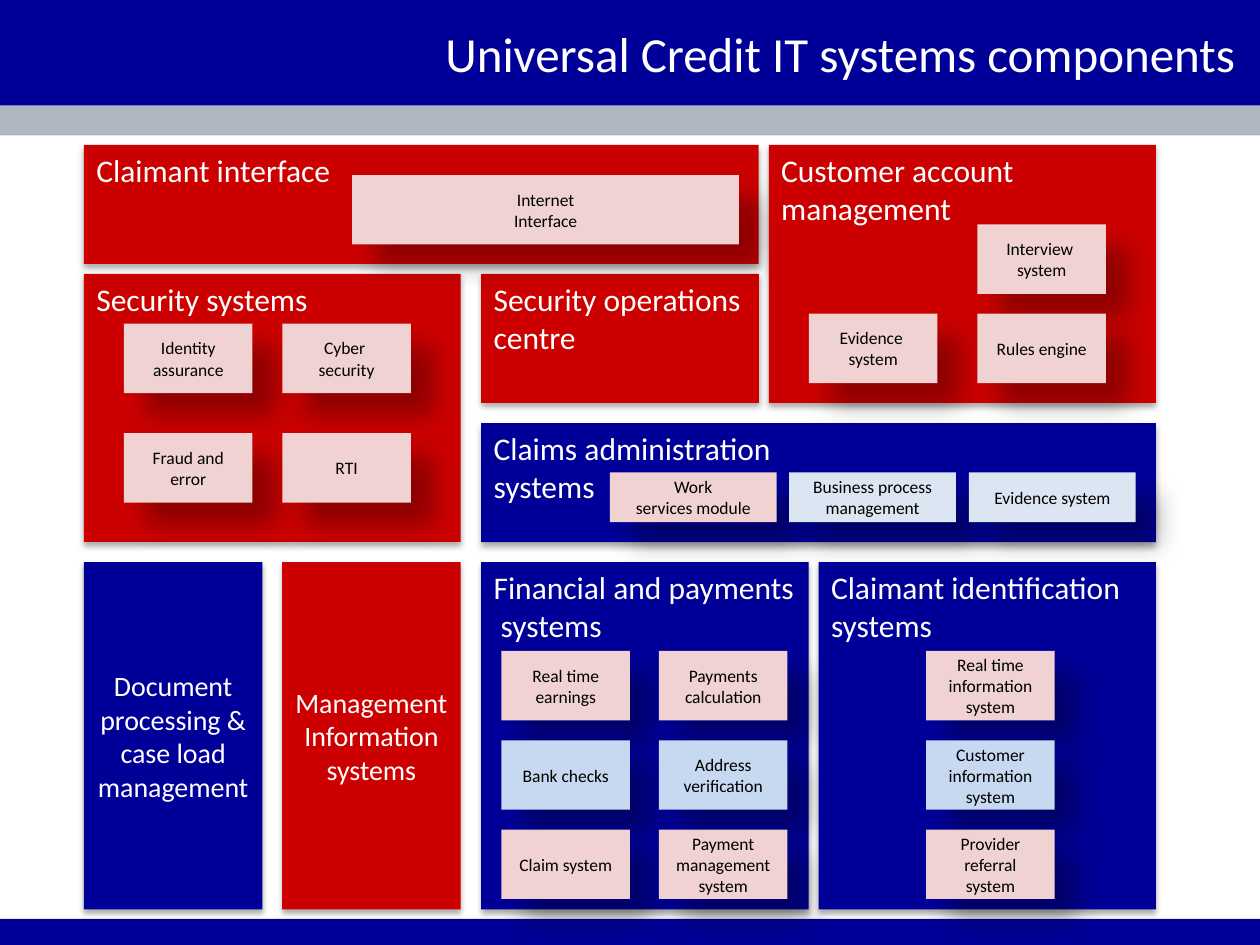
from dataclasses import dataclass, field

from lxml import etree
from pptx import Presentation
from pptx.dml.color import RGBColor
from pptx.enum import shapes, text
from pptx.oxml import ns
from pptx.util import Pt

COLORS = {
    "navy": "000099", "red": "CC0000", "grey": "AEB7C2", "white": "FFFFFF",
    "black": "000000", "pink": "EFD2D1", "pale": "DCE6F2", "sky": "C6D9F1",
}
FONT = "Calibri"
LEFT, MIDDLE, RIGHT = 48, 275, 660.5
NARROW_X, NARROW_W = 161.3, 102
SECOND_ROW, THIRD_ROW, BOTTOM_ROW = 156.5, 241.8, 321.2
TILE_W, TILE_H = 73.5, 39.7
ROW_1, ROW_2, ROW_3 = (372 + 51 * i for i in range(3))
FLAT_W, FLAT_H = 95.3, 28.4


@dataclass(frozen=True)
class Shadow:
    opacity: int
    blur: float
    distance: float
    angle: int


@dataclass(frozen=True)
class Style:
    size: float
    color: str
    align: text.PP_ALIGN
    anchor: text.MSO_ANCHOR
    shadow: Shadow


@dataclass(frozen=True)
class Tile:
    label: str
    x: float
    y: float
    fill: str = "pink"
    w: float = TILE_W
    h: float = TILE_H


@dataclass(frozen=True)
class Panel:
    label: str
    x: float
    y: float
    w: float
    h: float
    fill: str
    style: Style
    tiles: list[Tile] = field(default_factory=list)


LOW = Shadow(32, 3.5, 2.2, 90)
DEEP = Shadow(30, 15, 18, 45)
CENTER, MID = text.PP_ALIGN.CENTER, text.MSO_ANCHOR.MIDDLE
HEADED = Style(18, "white", text.PP_ALIGN.LEFT, text.MSO_ANCHOR.TOP, LOW)
CENTRED = Style(16, "white", CENTER, MID, LOW)
TILE = Style(10, "black", CENTER, MID, DEEP)

PANELS = [
    Panel("Financial and payments\v systems", MIDDLE, BOTTOM_ROW, 187.2, 198.5, "navy", HEADED, [
        Tile("Real time earnings", 286.5, ROW_1),
        Tile("Payments calculation", 376.5, ROW_1),
        Tile("Bank checks", 286.5, ROW_2, "sky"),
        Tile("Address verification", 376.5, ROW_2, "sky"),
        Tile("Claim system", 286.5, ROW_3),
        Tile("Payment management system", 376.5, ROW_3),
    ]),
    Panel("Security systems", LEFT, SECOND_ROW, 215.3, 153.2, "red", HEADED, [
        Tile("Identity assurance", 70.8, 185),
        Tile("Cyber \nsecurity", NARROW_X, 185),
        Tile("Fraud and error", 70.8, 247.5),
        Tile("RTI", NARROW_X, 247.5),
    ]),
    Panel("Management Information systems", NARROW_X, BOTTOM_ROW, NARROW_W, 198.5, "red", CENTRED),
    Panel("Claims administration\nsystems", MIDDLE, THIRD_ROW, RIGHT - MIDDLE, 68, "navy", HEADED, [
        Tile("Work\nservices module", 348.5, 270, "pink", FLAT_W, FLAT_H),
        Tile("Business process management", 451, 270, "pale", FLAT_W, FLAT_H),
        Tile("Evidence system", 553.7, 270, "pale", FLAT_W, FLAT_H),
    ]),
    Panel("Security operations centre", MIDDLE, SECOND_ROW, 158.7, 73.7, "red", HEADED),
    Panel("Document processing & case load management", LEFT, BOTTOM_ROW, NARROW_W, 198.5, "navy", CENTRED),
    Panel("Claimant interface", LEFT, 82.8, 385.5, 68, "red", HEADED, [
        Tile("Internet\nInterface", 201.3, 100, w=221),
    ]),
    Panel("Customer account management", 439.3, 82.8, RIGHT - 439.3, 147.4, "red", HEADED, [
        Tile("Interview \nsystem", 558.5, 128.2),
        Tile("Evidence \nsystem", 462.2, 179.2),
        Tile("Rules engine", 558.5, 179.2),
    ]),
    Panel("Claimant identification systems", 467.8, BOTTOM_ROW, RIGHT - 467.8, 198.5, "navy", HEADED, [
        Tile("Real time information system", 529.2, ROW_1),
        Tile("Customer information system", 529.2, ROW_2, "sky"),
        Tile("Provider referral system", 529.2, ROW_3),
    ]),
]


def rgb(name: str) -> RGBColor:
    return RGBColor.from_string(COLORS[name])


def paint(sp, fill: str) -> None:
    sp.shadow.inherit = False
    sp.fill.solid()
    sp.fill.fore_color.rgb = rgb(fill)
    sp.line.fill.background()


def add_rect(s, x: float, y: float, w: float, h: float, fill: str):
    sp = s.shapes.add_shape(shapes.MSO_SHAPE.RECTANGLE, Pt(x), Pt(y), Pt(w), Pt(h))
    paint(sp, fill)
    return sp


def write(sp, label: str, size: float, color: str, align, anchor) -> None:
    tf = sp.text_frame
    tf.text = label
    frame = {"word_wrap": True, "auto_size": text.MSO_AUTO_SIZE.NONE, "vertical_anchor": anchor}
    for name, value in frame.items():
        setattr(tf, name, value)
    for p in tf.paragraphs:
        p.alignment = align
        for r in p.runs:
            for name, value in {"name": FONT, "size": Pt(size)}.items():
                setattr(r.font, name, value)
            r.font.color.rgb = rgb(color)


def cast_shadow(sp, shadow: Shadow) -> None:
    effects = sp.element.spPr.find(ns.qn("a:effectLst"))
    outer = etree.SubElement(
        effects, ns.qn("a:outerShdw"), blurRad=str(Pt(shadow.blur)),
        dist=str(Pt(shadow.distance)), dir=str(shadow.angle * 60000),
        algn="tl", rotWithShape="0")
    color = etree.SubElement(outer, ns.qn("a:srgbClr"), val=COLORS["black"])
    etree.SubElement(color, ns.qn("a:alpha"), val=str(shadow.opacity * 1000))


def add_box(s, box: Panel | Tile, style: Style) -> None:
    sp = add_rect(s, box.x, box.y, box.w, box.h, box.fill)
    cast_shadow(sp, style.shadow)
    write(sp, box.label, style.size, style.color, style.align, style.anchor)


def add_title(s, label: str) -> None:
    sp = s.shapes.title
    place = {"left": 0, "top": 0, "width": 720, "height": 60.4}
    for name, value in place.items():
        setattr(sp, name, Pt(value))
    paint(sp, "navy")
    write(sp, label, 28, "white", text.PP_ALIGN.RIGHT, MID)
    sp.text_frame.margin_left = sp.text_frame.margin_right = Pt(14.4)


def main() -> None:
    prs = Presentation()
    prs.slide_width, prs.slide_height = Pt(720), Pt(540)
    s = prs.slides.add_slide(prs.slide_layouts[5])
    add_title(s, "Universal Credit IT systems components")
    add_rect(s, 0, 60.4, 720, 17, "grey")
    add_rect(s, 0, 525, 720, 15, "navy")
    for panel in PANELS:
        add_box(s, panel, panel.style)
        for tile in panel.tiles:
            add_box(s, tile, TILE)
    prs.save("out.pptx")


if __name__ == "__main__":
    main()
